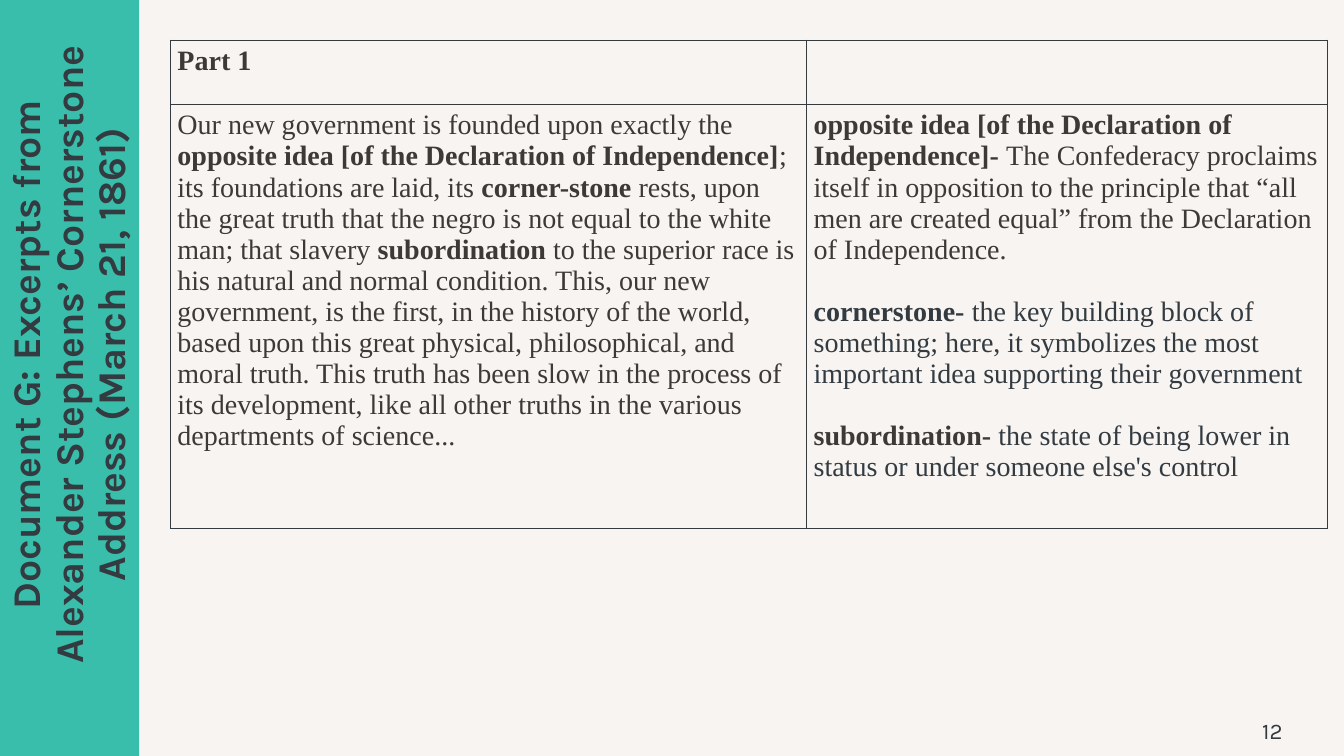
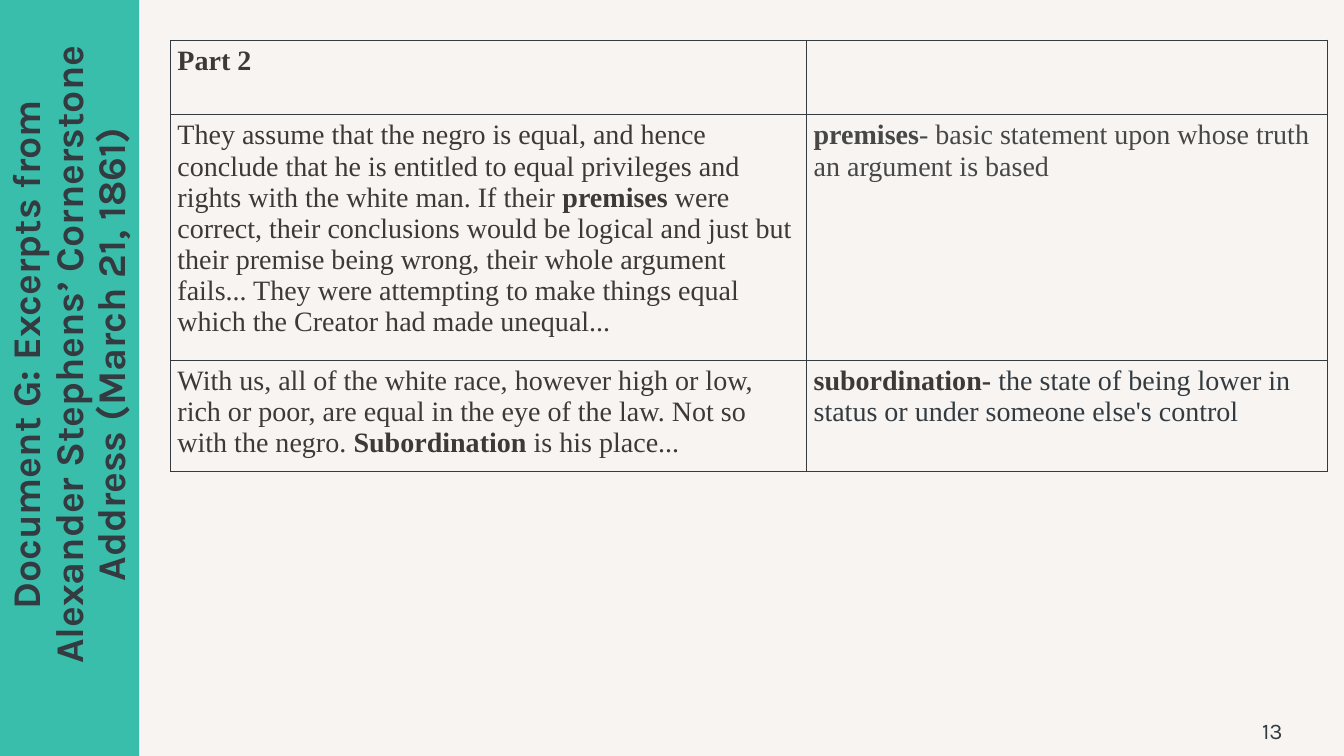
from dataclasses import dataclass

from lxml.etree import SubElement
from pptx import Presentation
from pptx.dml.color import RGBColor as RGB
from pptx.enum.shapes import MSO_SHAPE as SHAPE
from pptx.enum.text import MSO_ANCHOR as ANCHOR, PP_ALIGN as ALIGN
from pptx.oxml.ns import qn
from pptx.util import Inches, Pt


@dataclass(frozen=True)
class Theme:
    paper: str = "F7F4F1"
    band: str = "3ABEAC"
    ink: str = "333B41"
    body: str = "3C3936"
    gray: str = "474747"
    sans: str = "Karla"
    serif: str = "Times New Roman"
    title_pt: int = 28
    body_pt: int = 20
    number_pt: int = 16
    gap_pt: int = 22
    border_pt: int = 1


T = Theme()
PLAIN = {}
BOLD = {"bold": True}
INK = {"color": T.ink}
INK_BOLD = {"color": T.ink, "bold": True}
GRAY = {"color": T.gray}
GRAY_BOLD = {"color": T.gray, "bold": True}

TITLE = "Document G: Excerpts from Alexander Stephens’ Cornerstone Address (March 21, 1861)"
SUBORDINATION = [
    ("subordination- ", BOLD),
    ("the state of being lower in status or under someone else's control", INK),
]
COLUMNS = [6.31, 5.17]
SLIDES = [
    {
        "number": 12,
        "heights": [0.64, 4.2],
        "rows": [
            [[[("Part 1", BOLD)]], []],
            [
                [[
                    ("Our new government is founded upon exactly the ", PLAIN),
                    ("opposite idea [of the Declaration of Independence]", BOLD),
                    ("; its foundations are laid, its ", PLAIN),
                    ("corner-stone ", BOLD),
                    ("rests, upon the great truth that the negro is not equal to the "
                     "white man; that slavery ", PLAIN),
                    ("subordination ", BOLD),
                    ("to the superior race is his natural and normal condition. This, "
                     "our new government, is the first, in the history of the world, "
                     "based upon this great physical, philosophical, and moral truth. "
                     "This truth has been slow in the process of its development, like "
                     "all other truths in the various departments of science...", PLAIN),
                ]],
                [
                    [
                        ("opposite idea [of the Declaration of Independence]- ", BOLD),
                        ("The Confederacy proclaims itself in opposition to the "
                         "principle that “all men are created equal” from the "
                         "Declaration of Independence.", PLAIN),
                    ],
                    [
                        ("cornerstone-", INK_BOLD),
                        (" the key building block of something; here, it symbolizes "
                         "the most important idea supporting their government", INK),
                    ],
                    SUBORDINATION,
                ],
            ],
        ],
    },
    {
        "number": 13,
        "heights": [0.74, 2.26, 1.02],
        "rows": [
            [[[("Part 2", BOLD)]], []],
            [
                [[
                    ("They assume that the negro is equal, and hence conclude that he "
                     "is entitled to equal privileges and rights with the white man. "
                     "If their ", PLAIN),
                    ("premises ", BOLD),
                    ("were correct, their conclusions would be logical and just but "
                     "their premise being wrong, their whole argument fails... They "
                     "were attempting to make things equal which the Creator had made "
                     "unequal...", PLAIN),
                ]],
                [[
                    ("premises", GRAY_BOLD),
                    ("- basic statement upon whose truth an argument is based", GRAY),
                ]],
            ],
            [
                [[
                    ("With us, all of the white race, however high or low, rich or "
                     "poor, are equal in the eye of the law. Not so with the negro. ",
                     PLAIN),
                    ("Subordination", BOLD),
                    (" is his place...", PLAIN),
                ]],
                [SUBORDINATION],
            ],
        ],
    },
]


def add_run(p, text, font=T.serif, size=T.body_pt, color=T.body, bold=False):
    r = p.add_run()
    r.text = text
    r.font.name = font
    r.font.size = Pt(size)
    r.font.bold = bold
    r.font.color.rgb = RGB.from_string(color)


def add_label(s, box, text, rotation=0, spacing=1.0, **fmt):
    sp = s.shapes.add_textbox(*map(Inches, box))
    sp.rotation = rotation
    tf = sp.text_frame
    tf.word_wrap = True
    tf.vertical_anchor = ANCHOR.MIDDLE
    p = tf.paragraphs[0]
    p.alignment = ALIGN.CENTER
    p.line_spacing = spacing
    add_run(p, text, font=T.sans, color=T.ink, **fmt)


def add_frame(s, number):
    sp = s.shapes.add_shape(SHAPE.RECTANGLE, 0, 0, Inches(1.38), Inches(7.5))
    sp.shadow.inherit = False
    sp.fill.solid()
    sp.fill.fore_color.rgb = RGB.from_string(T.band)
    sp.line.fill.background()
    add_label(s, (-2.65, 2.97, 6.7, 1.1), TITLE, rotation=270, spacing=0.9,
              size=T.title_pt, bold=True)
    add_label(s, (12.14, 7.05, 0.96, 0.4), str(number), size=T.number_pt)


def set_borders(cell):
    tc_pr = cell._tc.get_or_add_tcPr()
    for i, side in enumerate(("lnL", "lnR", "lnT", "lnB")):
        ln = SubElement(tc_pr, qn(f"a:{side}"), w=str(Pt(T.border_pt)))
        fill = SubElement(ln, qn("a:solidFill"))
        SubElement(fill, qn("a:srgbClr"), val=T.ink)
        tc_pr.insert(i, ln)


def fill_cell(cell, paragraphs):
    cell.fill.background()
    cell.margin_left = cell.margin_right = Inches(0.07)
    cell.margin_top = cell.margin_bottom = Inches(0.05)
    set_borders(cell)
    tf = cell.text_frame
    for i, runs in enumerate(paragraphs):
        p = tf.add_paragraph() if i else tf.paragraphs[0]
        if i:
            p.space_before = Pt(T.gap_pt)
        for text, style in runs:
            add_run(p, text, **style)


def add_excerpt_table(s, rows, heights):
    box = (1.69, 0.4, sum(COLUMNS), sum(heights))
    table = s.shapes.add_table(len(rows), len(COLUMNS), *map(Inches, box)).table
    table.first_row = table.horz_banding = False
    for column, width in zip(table.columns, COLUMNS):
        column.width = Inches(width)
    for row, height, cells in zip(table.rows, heights, rows):
        row.height = Inches(height)
        for cell, paragraphs in zip(row.cells, cells):
            fill_cell(cell, paragraphs)


def main():
    prs = Presentation()
    prs.slide_width, prs.slide_height = Inches(13.33), Inches(7.5)
    background = prs.slide_master.background.fill
    background.solid()
    background.fore_color.rgb = RGB.from_string(T.paper)
    for data in SLIDES:
        s = prs.slides.add_slide(prs.slide_layouts[6])
        add_frame(s, data["number"])
        add_excerpt_table(s, data["rows"], data["heights"])
    prs.save("out.pptx")


if __name__ == "__main__":
    main()
